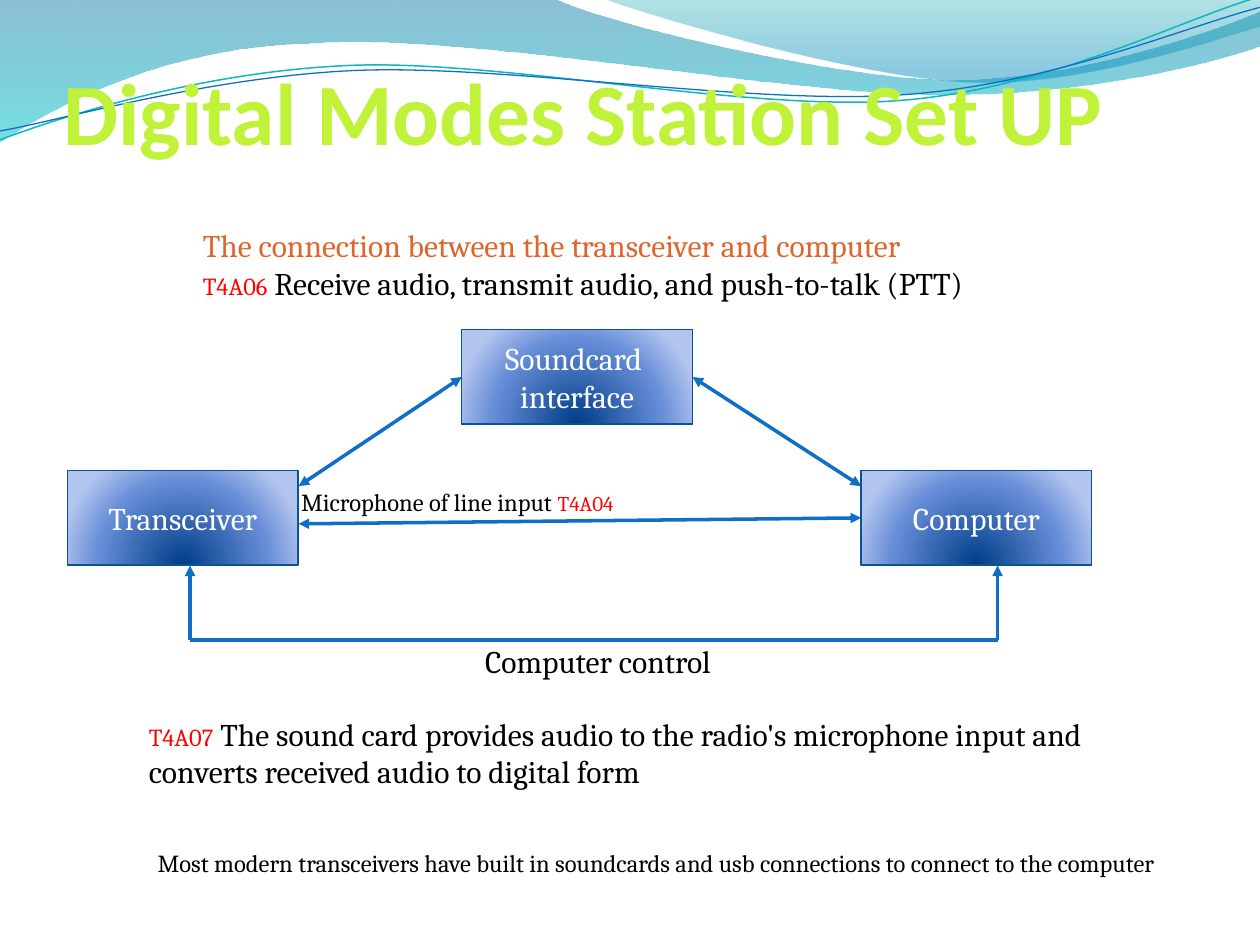
from lxml import etree
from pptx import Presentation
from pptx.dml.color import RGBColor
from pptx.enum import shapes, text
from pptx.oxml import ns
from pptx.util import Cm, Pt

THEME = {
    "body": "Cambria", "heading": "Calibri",
    "title": "BFF238", "accent": "DE662D", "code": "FF0000",
    "ink": "000000", "white": "FFFFFF",
    "arrow": "0F6FC6", "edge": "095295", "teal": "0AB8BF",
    "title_size": 50, "large": 18, "medium": 14, "small": 12,
}
# Gradient stops: position %, colour, opacity %
BOX_STOPS = [(0, "003D87", 100), (68, "668DD7", 100), (100, "B3C4EF", 100)]
BAND_STOPS = [(0, "0074A1", 45), (100, "00C6CF", 55)]
SWEEP_STOPS = [(0, "00A1A9", 30), (80, "008BBF", 45)]

# All positions are in centimetres. A wave is a start point and then steps:
# one point is a straight step, three points are a Bézier step.
FILLED_WAVES = [
    (BAND_STOPS, (0, 0), [
        [(11.18, -0.03)],
        [(12.09, 0.43), (16.87, 1.6), (19.25, 1.6)],
        [(21.67, 1.6), (24.33, 0.66), (25.4, 0.23)],
        [(25.43, 0.91)],
        [(24.97, 1.12), (22.1, 1.93), (18.95, 1.91)],
        [(15.8, 1.91), (9.7, 0.71), (6.53, 0.86)],
        [(3.28, 0.91), (1.17, 2.11), (-0.03, 2.87)],
        [(0, 0)]]),
    (SWEEP_STOPS, (12.17, -0.03), [
        [(12.93, 0.28), (17.32, 1.57), (19.53, 1.65)],
        [(21.77, 1.75), (24.41, 0.81), (25.4, 0.53)],
        [(25.4, 0)],
        [(12.17, -0.03)]]),
]
LINE_WAVES = [
    ("teal", 0.85, (0, 2.82), [
        [(1.22, 2.36), (4.01, 1.45), (7.04, 1.32)],
        [(10.03, 1.19), (15.06, 2.26), (18.11, 2.03)],
        [(21.16, 1.8), (23.83, 0.38), (25.35, -0.05)]]),
    ("arrow", 0.75, (0, 2.64), [
        [(1.19, 2.44), (4.17, 1.55), (7.19, 1.42)],
        [(10.24, 1.3), (15.16, 2.13), (18.21, 1.91)],
        [(21.23, 1.7), (23.9, 0.53), (25.4, 0.15)]]),
]

TITLE = "Digital Modes Station Set UP"
BOX_SIZE = (4.65, 1.9)
BOXES = {
    "transceiver": ((1.36, 9.49), ["Transceiver"]),
    "computer": ((17.36, 9.49), ["Computer"]),
    "soundcard": ((9.31, 6.65), ["Soundcard ", "interface"]),
}
# Each end is a point or a (box name, connection site) pair
LEFT, RIGHT = 1, 3
CONTROL_LEFT, CONTROL_RIGHT, CONTROL_Y, BOX_BOTTOM = 3.83, 20.11, 12.9, 11.4
ARROWS = [
    ((6.02, 9.8), ("soundcard", LEFT), ("headEnd", "tailEnd")),
    (("soundcard", RIGHT), (17.36, 9.8), ("headEnd", "tailEnd")),
    ((6.02, 10.56), ("computer", LEFT), ("headEnd", "tailEnd")),
    ((CONTROL_LEFT, CONTROL_Y), (CONTROL_RIGHT, CONTROL_Y), ()),
    ((CONTROL_RIGHT, CONTROL_Y), (CONTROL_RIGHT, BOX_BOTTOM), ("tailEnd",)),
    ((CONTROL_LEFT, CONTROL_Y), (CONTROL_LEFT, BOX_BOTTOM), ("tailEnd",)),
]
# Position and size, wrapping, paragraphs of (words, size, colour)
NOTES = [
    ((3.84, 4.43, 17.53, 1.8), False, [
        [("The connection between the transceiver and computer", "large", "accent")],
        [("T4A06", "medium", "code"),
         (" Receive audio, transmit audio, and push-to-talk (PTT)", "large", "ink")]]),
    ((2.75, 14.28, 21.59, 1.8), True, [
        [("T4A07", "medium", "code"),
         (" The sound card provides audio to the radio's microphone input "
          "and converts received audio to digital form", "large", "ink")]]),
    ((9.53, 12.82, 5.44, 1.02), False, [[("Computer control", "large", "ink")]]),
    ((5.82, 9.7, 7.42, 0.86), False, [
        [("Microphone of line input ", "medium", "ink"), ("T4A04", "small", "code")]]),
    ((2.93, 16.97, 21.69, 0.86), False, [
        [("Most modern transceivers have built in soundcards and usb connections "
          "to connect to the computer", "medium", "ink")]]),
]


def color(name):
    return RGBColor.from_string(THEME[name])


def cms(values):
    return [Cm(value) for value in values]


def style(span, size, tint, family="body"):
    span.font.name = THEME[family]
    span.font.size = Pt(THEME[size])
    span.font.color.rgb = color(tint)


def child(parent, tag, **attributes):
    return etree.SubElement(parent, ns.qn(tag), {k: str(v) for k, v in attributes.items()})


def fill_gradient(shape, stops, radial=False):
    shape.fill.solid()
    solid = shape._element.spPr.find(ns.qn("a:solidFill"))
    gradient = etree.Element(ns.qn("a:gradFill"), {"rotWithShape": "1"})
    stop_list = child(gradient, "a:gsLst")
    for position, tint, opacity in stops:
        stop = child(stop_list, "a:gs", pos=position * 1000)
        child(child(stop, "a:srgbClr", val=tint), "a:alpha", val=opacity * 1000)
    if radial:
        circle = child(gradient, "a:path", path="circle")
        child(circle, "a:fillToRect", l=50000, t=130000, r=50000, b=-30000)
    else:
        child(gradient, "a:lin", ang=5400000, scaled=1)
    solid.getparent().replace(solid, gradient)


def add_wave(page, start, steps, close):
    """Draw the outline through all points, then turn each triple into a curve."""
    builder = page.shapes.build_freeform(*cms(start))
    builder.add_line_segments([cms(point) for step in steps for point in step], close=close)
    wave = builder.convert_to_shape()
    wave.shadow.inherit = False
    segments = iter(list(wave._element.iter(ns.qn("a:lnTo"))))
    for step in steps:
        group = [next(segments) for _ in step]
        if len(group) == 3:
            curve = etree.Element(ns.qn("a:cubicBezTo"))
            group[0].addprevious(curve)
            for segment in group:
                curve.append(segment[0])
                segment.getparent().remove(segment)
    return wave


def move_to_master(deck, waves):
    tree = deck.slide_master.shapes._spTree
    for number, wave in enumerate(waves, start=101):
        wave._element.nvSpPr.cNvPr.set("id", str(number))
        tree.append(wave._element)


def add_box(page, place, lines):
    box = page.shapes.add_shape(shapes.MSO_SHAPE.RECTANGLE, *cms(place + BOX_SIZE))
    box.shadow.inherit = False
    fill_gradient(box, BOX_STOPS, radial=True)
    box.line.color.rgb, box.line.width = color("edge"), Pt(0.75)
    box.text_frame.text = "\n".join(lines)
    for para in box.text_frame.paragraphs:
        para.alignment = text.PP_ALIGN.CENTER
        style(para.runs[0], "large", "white")
    return box


def add_arrow(page, boxes, start, end, heads):
    points = [(0, 0) if side[0] in boxes else side for side in (start, end)]
    arrow = page.shapes.add_connector(shapes.MSO_CONNECTOR.STRAIGHT, *cms(points[0] + points[1]))
    for side, join in ((start, arrow.begin_connect), (end, arrow.end_connect)):
        if side[0] in boxes:
            join(boxes[side[0]], side[1])
    arrow.line.color.rgb, arrow.line.width = color("arrow"), Pt(2)
    for head in heads:
        child(arrow.line._get_or_add_ln(), "a:" + head, type="triangle")
    child(arrow._element.spPr, "a:effectLst")


def add_note(page, place, wrap, paragraphs):
    frame = page.shapes.add_textbox(*cms(place)).text_frame
    frame.word_wrap = wrap
    frame.auto_size = text.MSO_AUTO_SIZE.SHAPE_TO_FIT_TEXT
    for index, spans in enumerate(paragraphs):
        para = frame.add_paragraph() if index else frame.paragraphs[0]
        for words, size, tint in spans:
            span = para.add_run()
            span.text = words
            style(span, size, tint)


def set_title(page):
    title = page.shapes.title
    title.left, title.top, title.width, title.height = cms((1.27, 0.1, 23.06, 3.18))
    frame = title.text_frame
    frame.text = TITLE
    frame.auto_size = text.MSO_AUTO_SIZE.NONE
    frame.vertical_anchor = text.MSO_ANCHOR.BOTTOM
    frame.margin_left = frame.margin_right = frame.margin_bottom = 0
    para = frame.paragraphs[0]
    para.alignment = text.PP_ALIGN.LEFT
    style(para.runs[0], "title_size", "title", "heading")
    para.runs[0].font.bold = True


def main():
    deck = Presentation()
    deck.slide_width, deck.slide_height = cms((25.4, 19.05))
    page = deck.slides.add_slide(deck.slide_layouts[5])
    waves = []
    for stops, start, steps in FILLED_WAVES:
        waves.append(add_wave(page, start, steps, close=True))
        fill_gradient(waves[-1], stops)
        waves[-1].line.fill.background()
    for tint, width, start, steps in LINE_WAVES:
        waves.append(add_wave(page, start, steps, close=False))
        waves[-1].fill.background()
        waves[-1].line.color.rgb, waves[-1].line.width = color(tint), Pt(width)
    move_to_master(deck, waves)
    set_title(page)
    boxes = {name: add_box(page, *parts) for name, parts in BOXES.items()}
    for arrow in ARROWS:
        add_arrow(page, boxes, *arrow)
    for note in NOTES:
        add_note(page, *note)
    deck.save("out.pptx")


if __name__ == "__main__":
    main()
